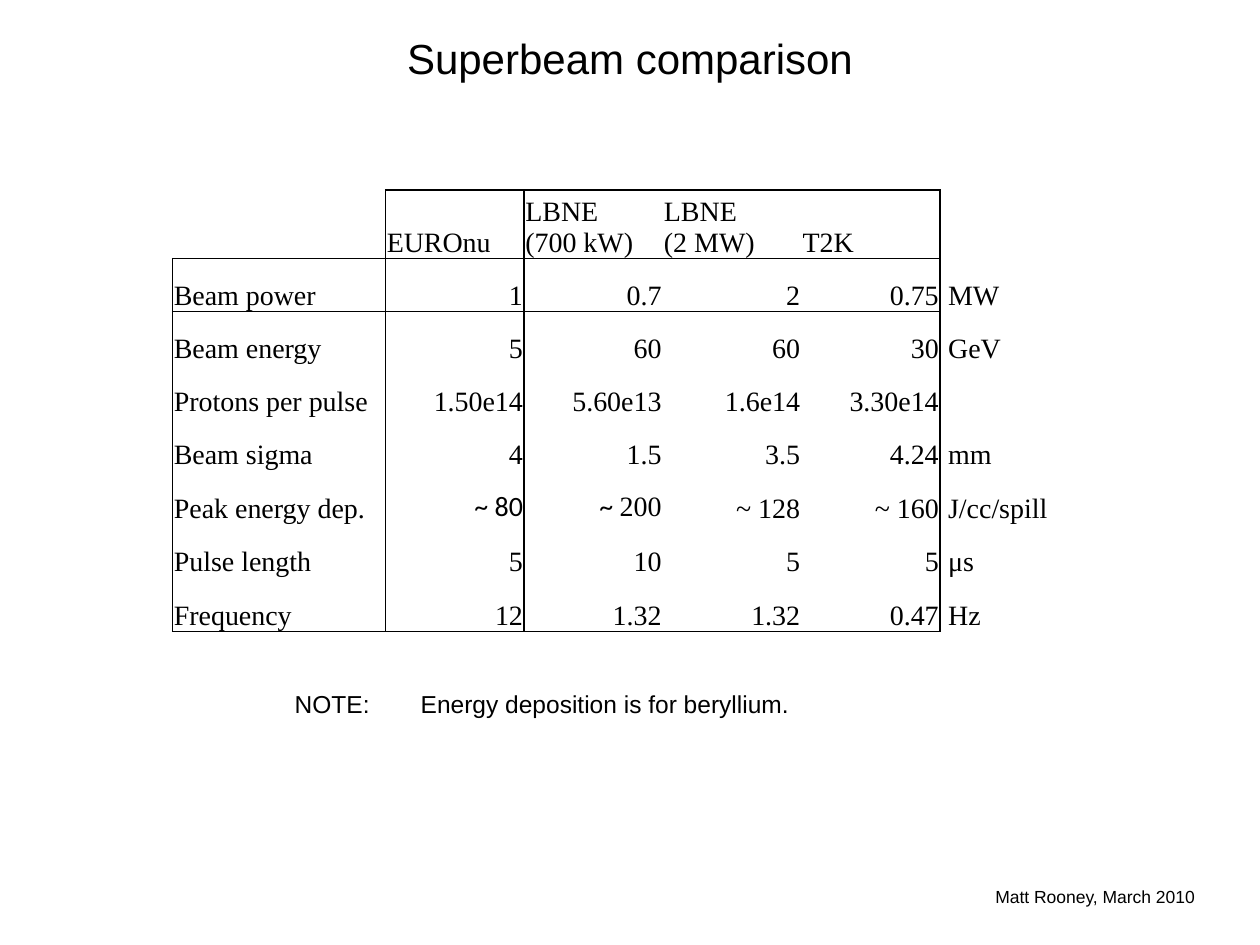
"""Build the superbeam comparison slide."""
import pptx
import pptx.util
import pptx.oxml
import pptx.oxml.ns
import pptx.dml.color
import pptx.enum.text
import lxml.etree

Inches, Pt = pptx.util.Inches, pptx.util.Pt
ALIGN, ANCHOR = pptx.enum.text.PP_ALIGN, pptx.enum.text.MSO_ANCHOR
COLORS = {"ink": "000000", "page": "FFFFFF"}
SERIF, SANS, MIXED = "Times New Roman", "Arial", "Calibri"
PLAIN = "{2D5ABB26-0587-4C30-8999-92F81FD0307C}"

ROWS = [
    ["", "EUROnu", "LBNE\n(700 kW)", "LBNE\n(2 MW)", "T2K", ""],
    ["Beam power", "1", "0.7", "2", "0.75", " MW"],
    ["Beam energy", "5", "60", "60", "30", " GeV"],
    ["Protons per pulse", "1.50e14", "5.60e13", "1.6e14", "3.30e14", ""],
    ["Beam sigma", "4", "1.5", "3.5", "4.24", " mm"],
    ["Peak energy dep.", [("~ 80", MIXED)], [("~ ", MIXED), ("200", SERIF)],
     "~ 128", "~ 160", " J/cc/spill"],
    ["Pulse length", "5", "10", "5", "5", " μs"],
    ["Frequency", "12", "1.32", "1.32", "0.47", " Hz"],
]
WIDTHS = [1.69, 1.1, 1.1, 1.1, 1.1, 0.89]
HEIGHTS = [0.51, 0.42, 0.42, 0.42, 0.42, 0.43, 0.42, 0.43]
NOTES = [
    ("Superbeam comparison", (0, 0, 10, 0.92),
     {"size": 24, "align": ALIGN.CENTER, "anchor": ANCHOR.MIDDLE}),
    ("Matt Rooney, March 2010", (5.08, 6.98, 4.5, 0.37),
     {"size": 10, "align": ALIGN.RIGHT}),
    ("NOTE: \tEnergy deposition is for beryllium.", (2.24, 5.42, 4.15, 0.57),
     {"size": 14, "wrap": False}),
]


def write(frame, text, size=16, face=SANS, align=ALIGN.LEFT,
          anchor=ANCHOR.TOP, wrap=True):
    frame.word_wrap = wrap
    frame.vertical_anchor = anchor
    lines = [[(line, face)] for line in text.split("\n")] if isinstance(text, str) else [text]
    for i, line in enumerate(lines):
        para = frame.add_paragraph() if i else frame.paragraphs[0]
        para.alignment = align
        for words, name in line:
            run = para.add_run()
            run.text = words
            run.font.size = Pt(size)
            run.font.name = name
            run.font.color.rgb = pptx.dml.color.RGBColor.from_string(COLORS["ink"])


def group(row, col):
    inside = 0 <= row < len(ROWS) and 0 <= col < 5 and (row, col) != (0, 0)
    return (row > 0, col > 0) if inside else None


def border(cell, row, col):
    props = cell._tc.get_or_add_tcPr()
    sides = [("L", 0, -1), ("R", 0, 1), ("T", -1, 0), ("B", 1, 0)]
    edges = [side for side, down, over in sides
             if group(row, col) != group(row + down, col + over)]
    for i, side in enumerate(edges):
        line = pptx.oxml.parse_xml(
            f'<a:ln{side} {pptx.oxml.ns.nsdecls("a")} w="{Pt(1)}"><a:solidFill>'
            f'<a:srgbClr val="{COLORS["ink"]}"/></a:solidFill></a:ln{side}>')
        props.insert(i, line)


def grid(slide):
    frame = slide.shapes.add_table(
        len(ROWS), len(WIDTHS), Inches(1.37), Inches(1.51),
        Inches(sum(WIDTHS)), Inches(sum(HEIGHTS)))
    table = frame.table
    table.first_row = table.horz_banding = False
    table._tbl.tblPr.find(pptx.oxml.ns.qn("a:tableStyleId")).text = PLAIN
    for col, width in zip(table.columns, WIDTHS):
        col.width = Inches(width)
    for row, height in zip(table.rows, HEIGHTS):
        row.height = Inches(height)
    for r, row in enumerate(ROWS):
        for c, text in enumerate(row):
            cell = table.cell(r, c)
            cell.fill.background()
            border(cell, r, c)
            if text:
                cell.margin_left = cell.margin_right = cell.margin_top = Inches(0.01)
                cell.margin_bottom = 0
                cell.vertical_anchor = ANCHOR.BOTTOM
                number = group(r, c) == (True, True)
                write(cell.text_frame, text, face=SERIF, anchor=ANCHOR.BOTTOM,
                      align=ALIGN.RIGHT if number else ALIGN.LEFT)


def main():
    deck = pptx.Presentation()
    deck.slide_width, deck.slide_height = Inches(10), Inches(7.5)
    slide = deck.slides.add_slide(deck.slide_layouts[6])
    fill = slide.background.fill
    fill.solid()
    fill.fore_color.rgb = pptx.dml.color.RGBColor.from_string(COLORS["page"])
    for text, place, style in NOTES:
        box = slide.shapes.add_textbox(*map(Inches, place))
        write(box.text_frame, text, **style)
    grid(slide)
    deck.save("out.pptx")


if __name__ == "__main__":
    main()
